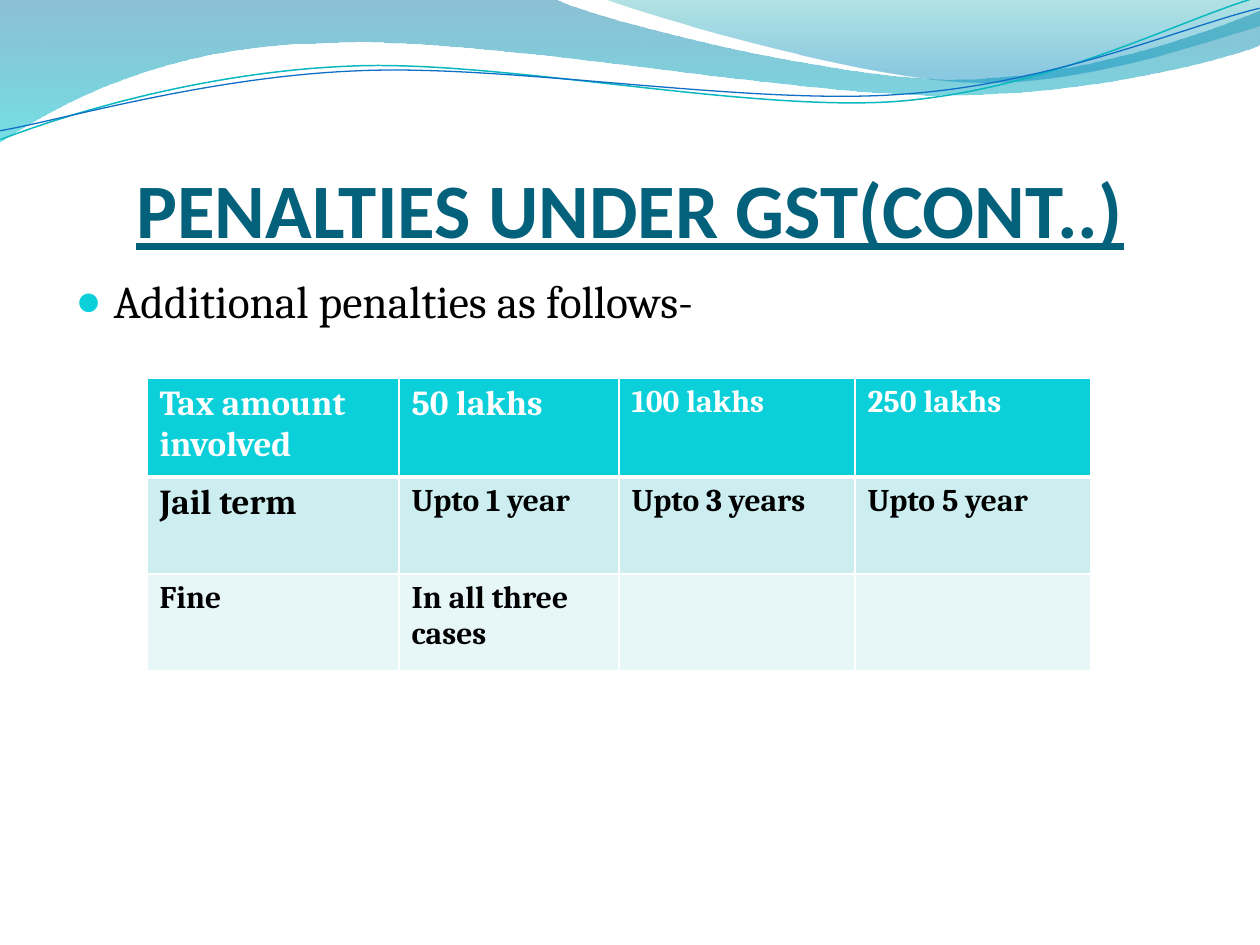
from dataclasses import dataclass

from lxml import etree
from pptx import Presentation
from pptx import util as u
from pptx.dml.color import RGBColor
from pptx.enum import text
from pptx.oxml import ns

PX = 914400 / 126


@dataclass(frozen=True)
class Theme:
    heading: str = "04617B"
    ink: str = "000000"
    white: str = "FFFFFF"
    accent: str = "0BD0D9"
    bands: tuple = ("CCEEF1", "E7F7F8")
    teal_line: str = "0AB8BF"
    blue_line: str = "0F6FC6"
    back_wave: tuple = ((0, "0074A1", 45), (1, "00C6CF", 55))
    front_wave: tuple = ((0, "00A1A9", 30), (0.8, "008BBF", 45))
    title_font: str = "Calibri"
    body_font: str = "Cambria"
    title_size: int = 44
    body_size: int = 26
    large_cell: int = 20
    small_cell: int = 18


T = Theme()

BACK_WAVE = [
    (0, 0), (554, -1), (600, 21, 837, 79, 955, 79),
    (1075, 79, 1207, 33, 1260, 11), (1261, 45),
    (1239, 55, 1096, 96, 940, 95), (784, 95, 481, 35, 324, 43),
    (163, 45, 58, 105, -1, 142),
]
FRONT_WAVE = [
    (604, -1), (641, 14, 859, 78, 969, 82),
    (1079, 87, 1211, 40, 1260, 26), (1260, 0),
]
TEAL_CURVE = [
    (-2, 110), (58, 90, 199, 52, 350, 53),
    (499, 53, 745, 118, 896, 114), (1049, 109, 1184, 45, 1260, 27),
]
BLUE_CURVE = [
    (-2, 101), (57, 94, 207, 57, 357, 58),
    (509, 58, 750, 112, 902, 107), (1052, 104, 1188, 52, 1262, 38),
]
CURVE_TILT = 357.3
COLUMNS = (252, 220, 236, 236)
ROWS = (99, 97, 97)
CELLS = (
    ("Tax amount involved", "50 lakhs", "100 lakhs", "250 lakhs"),
    ("Jail term", "Upto 1 year", "Upto 3 years", "Upto 5 year"),
    ("Fine", "In all three cases", "", ""),
)
LARGE_CELLS = {(0, 0), (0, 1), (1, 0)}


def px(n):
    return u.Emu(round(n * PX))


def rgb(value):
    return RGBColor.from_string(value)


def set_attrs(obj, values):
    for name, value in values.items():
        setattr(obj, name, value)


def place(obj, box):
    set_attrs(obj, dict(zip(("left", "top", "width", "height"), map(px, box))))


def add_run(p, words, color, **font):
    r = p.add_run()
    r.text = words
    set_attrs(r.font, font)
    r.font.color.rgb = rgb(color)


def add_xml(parent, tag, **attrs):
    return etree.SubElement(parent, ns.qn(tag), {k: str(v) for k, v in attrs.items()})


def add_curve(s, origin, segments, close):
    points = [(px(origin[0] + seg[i]), px(origin[1] + seg[i + 1]))
              for seg in segments for i in range(0, len(seg), 2)]
    builder = s.shapes.build_freeform(*points[0])
    builder.add_line_segments(points[1:], close=close)
    sp = builder.convert_to_shape()
    sp.shadow.inherit = False
    lines = iter(list(sp._element.spPr.iter(ns.qn("a:lnTo"))))
    for seg in segments[1:]:
        line = next(lines)
        if len(seg) == 6:
            line.addprevious(curve := etree.Element(ns.qn("a:cubicBezTo")))
            for node in (line, next(lines), next(lines)):
                curve.append(node[0])
                node.getparent().remove(node)
    return sp


def add_waves(s, origin):
    for segments, stops in ((BACK_WAVE, T.back_wave), (FRONT_WAVE, T.front_wave)):
        sp = add_curve(s, origin, segments, True)
        sp.line.fill.background()
        sp.fill.gradient()
        sp.fill.gradient_angle = 270
        for stop, (position, color, _) in zip(sp.fill.gradient_stops, stops):
            stop.position = position
            stop.color.rgb = rgb(color)
        colors = sp._element.spPr.iter(ns.qn("a:srgbClr"))
        for node, (_, _, alpha) in zip(colors, stops):
            add_xml(node, "a:alpha", val=alpha * 1000)
    for segments, color, width in ((TEAL_CURVE, T.teal_line, 0.85), (BLUE_CURVE, T.blue_line, 0.75)):
        sp = add_curve(s, origin, segments, False)
        sp.rotation = CURVE_TILT
        sp.fill.background()
        sp.line.color.rgb = rgb(color)
        sp.line.width = u.Pt(width)


def add_title(s, box):
    sp = s.shapes.title
    place(sp, box)
    s.shapes._spTree.append(sp._element)
    tf = sp.text_frame
    set_attrs(tf, dict(margin_left=0, margin_right=0, margin_top=px(6), margin_bottom=0,
                       word_wrap=True, vertical_anchor=text.MSO_ANCHOR.BOTTOM))
    p = tf.paragraphs[0]
    p.alignment = text.PP_ALIGN.CENTER
    add_run(p, "PENALTIES UNDER GST(CONT..)", T.heading, name=T.title_font,
            size=u.Pt(T.title_size), bold=True, underline=True)


def add_body(s, box):
    sp = s.placeholders[1]
    place(sp, box)
    s.shapes._spTree.append(sp._element)
    p = sp.text_frame.paragraphs[0]
    add_run(p, "Additional penalties as follows-", T.ink, name=T.body_font, size=u.Pt(T.body_size))
    pPr = p._p.get_or_add_pPr()
    pPr.set("marL", str(px(38)))
    pPr.set("indent", str(px(-38)))
    add_xml(add_xml(pPr, "a:spcBef"), "a:spcPct", val=20000)
    add_xml(add_xml(pPr, "a:buClr"), "a:srgbClr", val=T.accent)
    add_xml(pPr, "a:buSzPct", val=95000)
    add_xml(pPr, "a:buChar", char="●")


def add_header_borders(cell):
    tcPr = cell._tc.get_or_add_tcPr()
    for side, width in zip("LRTB", (1, 1, 1, 3)):
        ln = add_xml(tcPr, f"a:ln{side}", w=u.Pt(width))
        add_xml(add_xml(ln, "a:solidFill"), "a:srgbClr", val=T.white)


def format_cell(cell, row, col, words):
    if row == 0:
        add_header_borders(cell)
    cell.fill.solid()
    cell.fill.fore_color.rgb = rgb((T.accent, *T.bands)[row])
    if words:
        size = T.large_cell if (row, col) in LARGE_CELLS else T.small_cell
        add_run(cell.text_frame.paragraphs[0], words, T.ink if row else T.white,
                name=T.body_font, size=u.Pt(size), bold=True)


def add_penalty_table(s, box):
    table = s.shapes.add_table(len(ROWS), len(COLUMNS), *map(px, box)).table
    for column, width in zip(table.columns, COLUMNS):
        column.width = px(width)
    for row, height in zip(table.rows, ROWS):
        row.height = px(height)
    for i, line in enumerate(CELLS):
        for j, words in enumerate(line):
            format_cell(table.cell(i, j), i, j, words)


def main():
    prs = Presentation()
    set_attrs(prs, dict(slide_width=px(1260), slide_height=px(945)))
    s = prs.slides.add_slide(prs.slide_layouts[1])
    add_waves(s, (0, 0))
    add_title(s, (63, 97, 1134, 157))
    add_body(s, (63, 267, 1134, 605))
    add_penalty_table(s, (147, 378, sum(COLUMNS), sum(ROWS)))
    prs.save("out.pptx")


if __name__ == "__main__":
    main()
